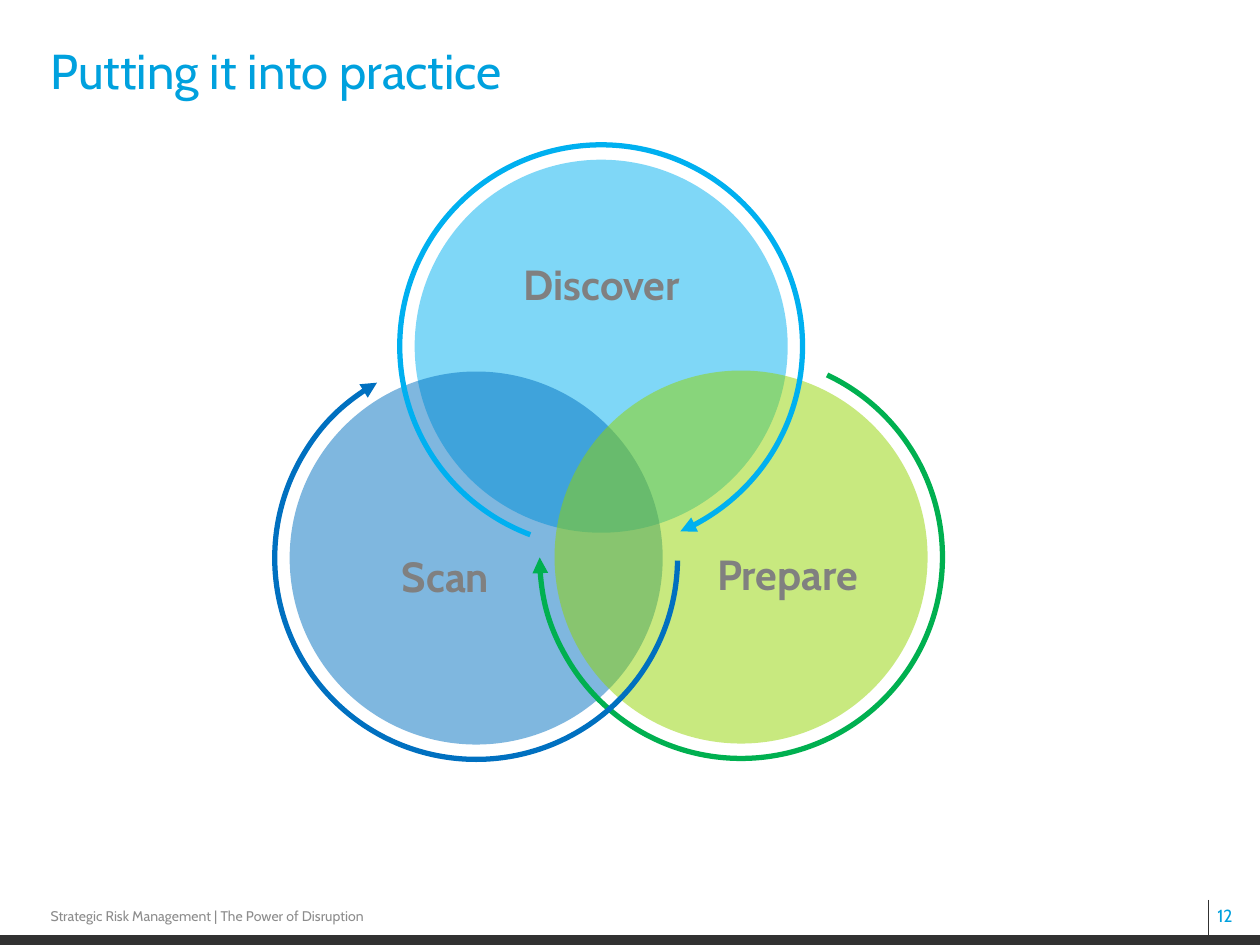
import dataclasses

import lxml.etree
import pptx
import pptx.dml.color
import pptx.enum.shapes
import pptx.enum.text
import pptx.oxml.ns
import pptx.util

Cm = pptx.util.Cm
Pt = pptx.util.Pt
Shape = pptx.enum.shapes.MSO_SHAPE
Anchor = pptx.enum.text.MSO_ANCHOR
Align = pptx.enum.text.PP_ALIGN

CIRCLE_RADIUS = 3.76
ARC_RADIUS = 4.06
LABEL_HEIGHT = 1.02
ACCENT = "00A1DE"
DARK = "313131"


@dataclasses.dataclass(frozen=True)
class Stage:
    name: str
    center: tuple[float, float]
    fill: str
    line: str
    start: float
    end: float
    label_center: tuple[float, float]
    label_width: float


DISCOVER = Stage("Discover", (12.12, 6.98), "00B0F0", "00B0F0", 110.6, 66.84, (12.13, 5.72), 3.43)
SCAN = Stage("Scan", (9.6, 11.25), "0070C0", "0070C0", 0.73, 240.51, (8.98, 11.61), 1.85)
PREPARE = Stage("Prepare", (14.94, 11.23), "92D400", "00B050", 295.29, 179.89, (15.88, 11.56), 3.1)


def color(value: str) -> pptx.dml.color.RGBColor:
    return pptx.dml.color.RGBColor.from_string(value)


def add_child(parent, tag: str, **attributes: str):
    child = lxml.etree.SubElement(parent, pptx.oxml.ns.qn(tag))
    for name, value in attributes.items():
        child.set(name, value)
    return child


def set_text(shape, text: str, size: float, font_color: str, anchor, align=Align.LEFT,
             bold: bool = False, wrap: bool = True) -> None:
    frame = shape.text_frame
    frame.text = text
    paragraph = frame.paragraphs[0]
    paragraph.alignment = align
    frame_format = {
        "margin_left": 0, "margin_top": 0, "margin_right": 0, "margin_bottom": 0,
        "vertical_anchor": anchor, "word_wrap": wrap,
    }
    font_format = {"name": "Cabin", "size": Pt(size), "bold": bold}
    for target, values in ((frame, frame_format), (paragraph.font, font_format)):
        for name, value in values.items():
            setattr(target, name, value)
    paragraph.font.color.rgb = color(font_color)


def add_round(shapes, kind, center: tuple[float, float], radius: float):
    x, y = center
    shape = shapes.add_shape(kind, Cm(x - radius), Cm(y - radius), Cm(2 * radius), Cm(2 * radius))
    shape.shadow.inherit = False
    return shape


def add_circle(shapes, stage: Stage) -> None:
    circle = add_round(shapes, Shape.OVAL, stage.center, CIRCLE_RADIUS)
    circle.fill.solid()
    circle.fill.fore_color.rgb = color(stage.fill)
    circle.line.fill.background()
    fill_color = circle.fill._xPr.find(".//" + pptx.oxml.ns.qn("a:srgbClr"))
    add_child(fill_color, "a:alpha", val="50000")


def add_arc(shapes, stage: Stage) -> None:
    arc = add_round(shapes, Shape.ARC, stage.center, ARC_RADIUS)
    for index, degrees in enumerate((stage.start, stage.end)):
        arc.adjustments[index] = degrees * 0.6
    arc.fill.background()
    arc.line.color.rgb = color(stage.line)
    arc.line.width = Pt(3)
    add_child(arc.line._get_or_add_ln(), "a:tailEnd", type="triangle")


def add_label(shapes, stage: Stage) -> None:
    x, y = stage.label_center
    label = shapes.add_textbox(Cm(x - stage.label_width / 2), Cm(y - LABEL_HEIGHT / 2),
                               Cm(stage.label_width), Cm(LABEL_HEIGHT))
    set_text(label, stage.name, 24, "808080", Anchor.MIDDLE, Align.CENTER, bold=True, wrap=False)


def add_footer(shapes) -> None:
    number = shapes.add_textbox(Cm(24.54), Cm(18.24), Cm(0.86), Cm(0.43))
    set_text(number, "12", 10, ACCENT, Anchor.BOTTOM)
    bar = shapes.add_shape(Shape.RECTANGLE, 0, Cm(18.85), Cm(25.4), Cm(0.2))
    bar.shadow.inherit = False
    bar.fill.solid()
    bar.fill.fore_color.rgb = color(DARK)
    bar.line.fill.background()
    divider = shapes.add_connector(pptx.enum.shapes.MSO_CONNECTOR.STRAIGHT,
                                   Cm(24.36), Cm(18.14), Cm(24.36), Cm(18.9))
    divider.line.color.rgb = color(DARK)
    divider.line.width = Pt(0.75)
    add_child(divider._element.spPr, "a:effectLst")
    caption = shapes.add_textbox(Cm(1.02), Cm(18.31), Cm(11.43), Cm(0.33))
    set_text(caption, "Strategic Risk Management | The Power of Disruption", 8, "8C8C8C", Anchor.BOTTOM)


def main() -> None:
    presentation = pptx.Presentation()
    presentation.slide_width, presentation.slide_height = Cm(25.4), Cm(19.05)
    slide = presentation.slides.add_slide(presentation.slide_layouts[5])
    title = slide.shapes.title
    position = {"left": Cm(1.02), "top": Cm(0.81), "width": Cm(23.37), "height": Cm(3.45)}
    for name, value in position.items():
        setattr(title, name, value)
    set_text(title, "Putting it into practice", 28, ACCENT, Anchor.TOP)
    add_footer(slide.shapes)
    diagram = slide.shapes.add_group_shape().shapes
    for stage in (DISCOVER, SCAN, PREPARE):
        add_circle(diagram, stage)
    for draw in (add_arc, add_label):
        for stage in (DISCOVER, PREPARE, SCAN):
            draw(diagram, stage)
    presentation.save("out.pptx")


if __name__ == "__main__":
    main()
